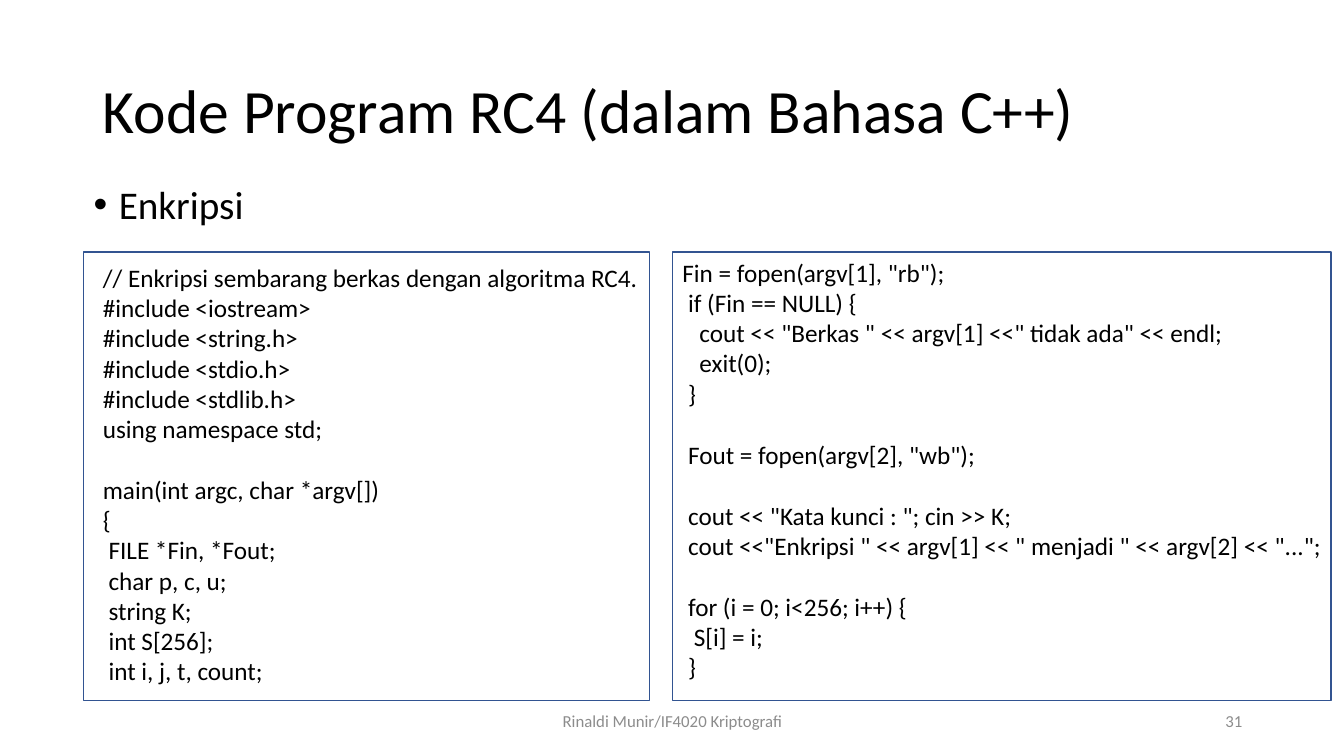
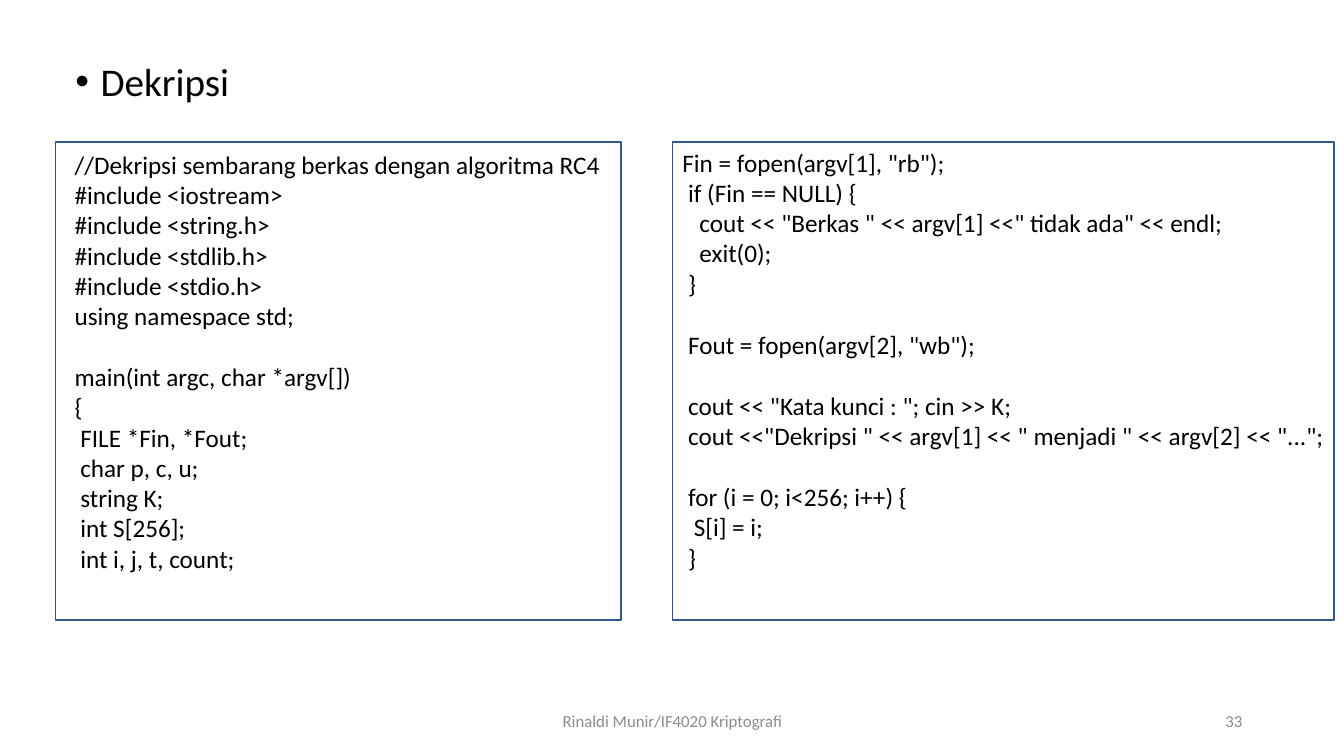
from dataclasses import dataclass

from lxml.etree import SubElement
from pptx import Presentation
from pptx.dml.color import RGBColor
from pptx.enum.shapes import MSO_SHAPE
from pptx.enum.text import MSO_ANCHOR, MSO_AUTO_SIZE, PP_ALIGN
from pptx.oxml.ns import qn
from pptx.util import Inches, Pt


@dataclass(frozen=True)
class Theme:
    font: str = "Calibri"
    ink: RGBColor = RGBColor(0x00, 0x00, 0x00)
    muted: RGBColor = RGBColor(0x8C, 0x8C, 0x8C)
    border: RGBColor = RGBColor(0x32, 0x54, 0x91)
    title_size: int = 44
    topic_size: int = 28
    code_size: int = 18
    footer_size: int = 12
    code_line: int = 22


THEME = Theme()
TITLE_ONLY, BLANK = 5, 6
FOOTER = "Rinaldi Munir/IF4020 Kriptografi"

SETUP_CODE = """{comment}
#include <iostream>
#include <string.h>
{libraries}
using namespace std;

main(int argc, char *argv[])
{{
 FILE *Fin, *Fout;
 char p, c, u;
 string K;
 int S[256];
 int i, j, t, count;"""

FILE_CODE = """Fin = fopen(argv[1], "rb");
 if (Fin == NULL) {{
   cout << "Berkas " << argv[1] <<" tidak ada" << endl;
   exit(0);
 }}

 Fout = fopen(argv[2], "wb");

 cout << "Kata kunci : "; cin >> K;
 cout <<"{action} " << argv[1] << " menjadi " << argv[2] << "...";

 for (i = 0; i<256; i++) {{
  S[i] = i;
 }}"""


def add_bullet(paragraph):
    properties = paragraph._p.get_or_add_pPr()
    properties.set("marL", str(Inches(0.25)))
    properties.set("indent", str(-Inches(0.25)))
    SubElement(properties, qn("a:buFont"), typeface="Arial")
    SubElement(properties, qn("a:buChar"), char="•")


def write(shape, text, *, size, color=THEME.ink, align=PP_ALIGN.LEFT,
          anchor=MSO_ANCHOR.TOP, line_spacing=1.0, bullet=False,
          left_inset=0.1, top_inset=0.05, right_inset=0.1):
    """Fill a shape with one paragraph a line; an empty line becomes a gap."""
    frame = shape.text_frame
    frame.word_wrap = True
    frame.auto_size = MSO_AUTO_SIZE.NONE
    frame.vertical_anchor = anchor
    frame.margin_left = Inches(left_inset)
    frame.margin_top = Inches(top_inset)
    frame.margin_right = Inches(right_inset)
    paragraph, gap = frame.paragraphs[0], 0
    for number, line in enumerate(text.split("\n")):
        if not line:
            gap = THEME.code_line
            continue
        if number:
            paragraph = frame.add_paragraph()
        paragraph.alignment = align
        paragraph.line_spacing = line_spacing
        paragraph.space_before = Pt(gap)
        gap = 0
        if bullet:
            add_bullet(paragraph)
        run = paragraph.add_run()
        run.text = line
        run.font.name = THEME.font
        run.font.size = Pt(size)
        run.font.color.rgb = color


def add_label(slide, text, box, **text_format):
    label = slide.shapes.add_textbox(*map(Inches, box))
    write(label, text, **text_format)


def add_title(slide, text):
    title = slide.shapes.title
    title.left, title.top, title.width, title.height = map(
        Inches, (0.92, 0.4, 11.5, 1.45))
    write(title, text, size=THEME.title_size, anchor=MSO_ANCHOR.MIDDLE,
          line_spacing=0.9)


def add_footer(slide, page):
    for text, left, width, align in (
            (FOOTER, 4.42, 4.5, PP_ALIGN.CENTER),
            (str(page), 9.42, 3, PP_ALIGN.RIGHT)):
        add_label(slide, text, (left, 6.95, width, 0.4), align=align,
                  size=THEME.footer_size, color=THEME.muted,
                  anchor=MSO_ANCHOR.MIDDLE)


def add_code_panel(slide, code, box, **insets):
    panel = slide.shapes.add_shape(MSO_SHAPE.RECTANGLE, *map(Inches, box))
    panel.shadow.inherit = False
    panel.fill.background()
    panel.line.color.rgb = THEME.border
    panel.line.width = Pt(1)
    write(panel, code, size=THEME.code_size, right_inset=0, **insets)


def add_code_slide(deck, *, topic, topic_at, comment, libraries, panels,
                   setup_top_inset, page, title=None):
    """Show the setup code and the file code side by side under a topic.

    panels holds the left, top, left width, right width and height.
    """
    layout = deck.slide_layouts[TITLE_ONLY if title else BLANK]
    slide = deck.slides.add_slide(layout)
    if title:
        add_title(slide, title)
    add_label(slide, topic, (*topic_at, 11.5, 0.6), size=THEME.topic_size,
              line_spacing=0.9, bullet=True)
    left, top, setup_width, file_width, height = panels
    setup = SETUP_CODE.format(
        comment=comment,
        libraries="\n".join(f"#include <{name}>" for name in libraries))
    add_code_panel(slide, setup, (left, top, setup_width, height),
                   left_inset=0.19, top_inset=setup_top_inset)
    add_code_panel(slide, FILE_CODE.format(action=topic),
                   (6.67, top, file_width, height))
    add_footer(slide, page)


def main():
    deck = Presentation()
    deck.slide_width, deck.slide_height = Inches(13.33), Inches(7.5)
    add_code_slide(
        deck, title="Kode Program RC4 (dalam Bahasa C++)",
        topic="Enkripsi", topic_at=(0.83, 1.79),
        comment="// Enkripsi sembarang berkas dengan algoritma RC4.",
        libraries=("stdio.h", "stdlib.h"),
        panels=(0.83, 2.5, 5.61, 6.53, 4.45), setup_top_inset=0.1, page=31)
    add_code_slide(
        deck, topic="Dekripsi", topic_at=(0.65, 0.57),
        comment="//Dekripsi sembarang berkas dengan algoritma RC4",
        libraries=("stdlib.h", "stdio.h"),
        panels=(0.55, 1.41, 5.61, 6.56, 4.74), setup_top_inset=0.07, page=33)
    deck.save("out.pptx")


if __name__ == "__main__":
    main()
